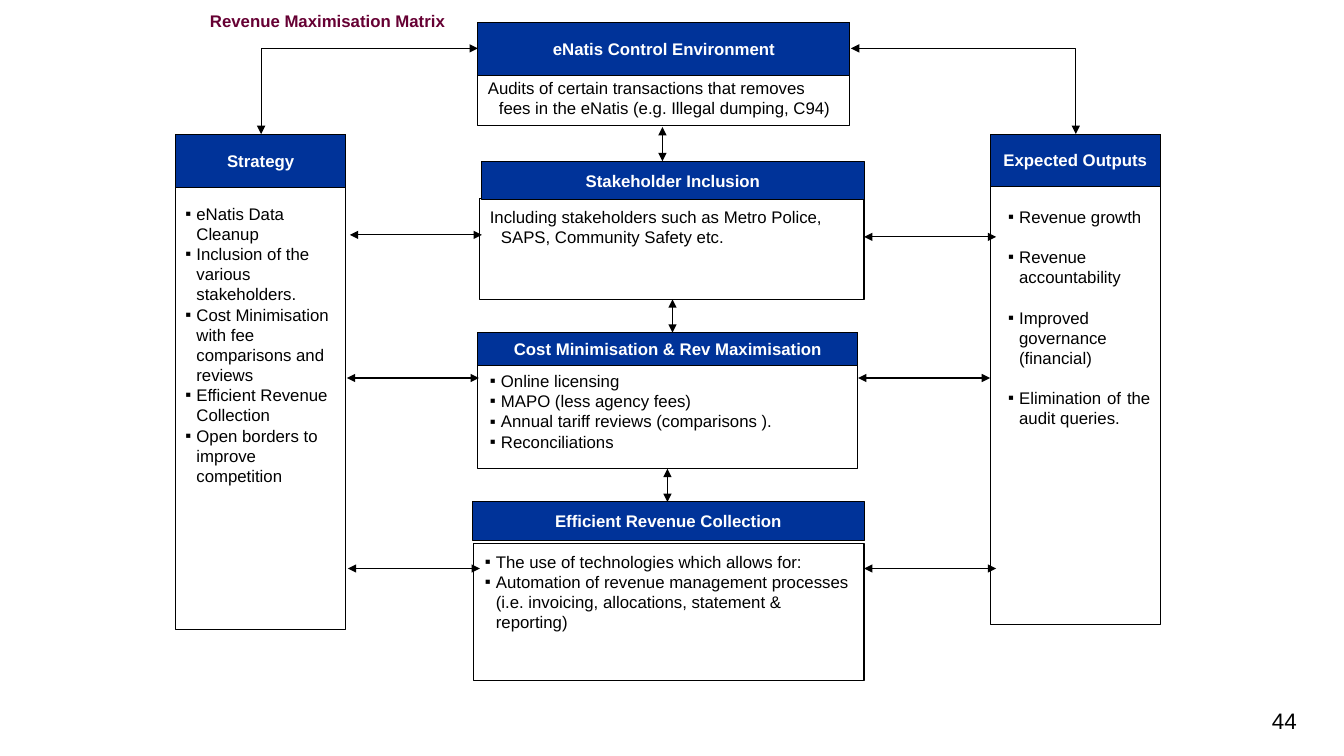
from lxml.etree import SubElement
from pptx import Presentation
from pptx.dml.color import RGBColor
from pptx.enum.shapes import MSO_CONNECTOR as Link, MSO_SHAPE as Shape
from pptx.enum.text import MSO_ANCHOR as Anchor, PP_ALIGN as Align
from pptx.oxml.ns import qn
from pptx.util import Emu, Pt

PX = 9144  # one px is a hundredth of an inch
COLOURS = {"black": "000000", "white": "FFFFFF", "navy": "003399", "plum": "660033"}
INDENT = 11


def emu(*lengths):
    return [Emu(length * PX) for length in lengths]


def colour(name):
    return RGBColor.from_string(COLOURS[name])


class Matrix:
    """Style and drawing methods for the current slide."""
    font = "Arial"
    line_width = Pt(0.75)
    line_height = Pt(14.4)

    def __init__(self, slide):
        self.shapes = slide.shapes

    def add_text(self, paragraph, text, ink="black", size=12, bold=False, align=Align.LEFT):
        paragraph.alignment = align
        run = paragraph.add_run()
        run.text = text
        run.font.name, run.font.size, run.font.bold = self.font, Pt(size), bold
        run.font.color.rgb = colour(ink)

    def box(self, place, fill, title=None):
        box = self.shapes.add_shape(Shape.RECTANGLE, *emu(*place))
        box.shadow.inherit = False
        box.fill.solid()
        box.fill.fore_color.rgb = colour(fill)
        box.line.color.rgb = colour("black")
        box.line.width = self.line_width
        if title:
            frame = box.text_frame
            frame.word_wrap = False
            frame.vertical_anchor = Anchor.MIDDLE
            self.add_text(frame.paragraphs[0], title, "white", bold=True, align=Align.CENTER)

    def label(self, place, text, wrap=True, anchor=Anchor.TOP, **style):
        frame = self.shapes.add_textbox(*emu(*place)).text_frame
        frame.word_wrap = wrap
        frame.vertical_anchor = anchor
        self.add_text(frame.paragraphs[0], text, **style)

    def points(self, place, items, bullet=True, gap=0, align=Align.LEFT):
        frame = self.shapes.add_textbox(*emu(*place)).text_frame
        frame.word_wrap = True
        for index, item in enumerate(items):
            paragraph = frame.add_paragraph() if index else frame.paragraphs[0]
            props = paragraph._p.get_or_add_pPr()
            props.set("marL", str(INDENT * PX))
            props.set("indent", str(-INDENT * PX))
            if bullet:
                SubElement(props, qn("a:buFont")).set("typeface", self.font)
                SubElement(props, qn("a:buChar")).set("char", "▪")
            paragraph.line_spacing = self.line_height
            if index and gap:
                paragraph.space_before = Pt(gap)
            self.add_text(paragraph, item, align=align)

    def panel(self, title, header, body, place, items, **style):
        self.box(body, "white")
        self.box(header, "navy", title)
        self.points(place, items, **style)

    def arrow(self, x1, y1, x2, y2):
        bent = x1 != x2 and y1 != y2
        kind = Link.ELBOW if bent else Link.STRAIGHT
        arrow = self.shapes.add_connector(kind, *emu(x1, y1, x2, y2))
        arrow.line.color.rgb = colour("black")
        arrow.line.width = self.line_width
        props = arrow._element.spPr
        if bent:  # a single corner
            props.find(qn("a:prstGeom")).set("prst", "bentConnector2")
        for end in ("a:headEnd", "a:tailEnd"):
            SubElement(props.find(qn("a:ln")), qn(end)).set("type", "triangle")
        SubElement(props, qn("a:effectLst"))


def main():
    deck = Presentation()
    deck.slide_width, deck.slide_height = emu(1333, 750)
    matrix = Matrix(deck.slides.add_slide(deck.slide_layouts[6]))

    # Side columns
    matrix.panel("Expected Outputs", (982, 133, 169, 52), (982, 133, 169, 487),
                 (990, 200, 161, 252),
                 ["Revenue growth", "Revenue accountability",
                  "Improved governance (financial)",
                  "Elimination of the audit queries."],
                 gap=14.4, align=Align.JUSTIFY)
    matrix.panel("Strategy", (174, 133, 169, 53), (174, 133, 169, 492),
                 (174, 197, 177, 293),
                 ["eNatis Data Cleanup", "Inclusion of the various stakeholders.",
                  "Cost Minimisation with fee comparisons and reviews",
                  "Efficient Revenue Collection", "Open borders to improve competition"])

    # Central stack, top to bottom
    matrix.panel("eNatis Control Environment", (474, 22, 369, 53), (474, 42, 369, 83),
                 (474, 72, 369, 50),
                 ["Audits of certain transactions that removes fees in the eNatis "
                  "(e.g. Illegal dumping, C94)"], bullet=False)
    matrix.panel("Stakeholder Inclusion", (478, 160, 379, 38), (476, 197, 381, 100),
                 (476, 200, 375, 50),
                 ["Including stakeholders such as Metro Police, SAPS, "
                  "Community Safety etc."], bullet=False)
    matrix.panel("Cost Minimisation & Rev Maximisation", (474, 330, 377, 33),
                 (474, 330, 377, 135), (476, 363, 375, 91),
                 ["Online licensing", "MAPO (less agency fees)",
                  "Annual tariff reviews (comparisons ).", "Reconciliations"])
    matrix.panel("Efficient Revenue Collection", (469, 498, 388, 38),
                 (470, 539, 387, 136), (471, 542, 388, 91),
                 ["The use of technologies which allows for:",
                  "Automation of revenue management processes "
                  "(i.e. invoicing, allocations, statement & reporting)"])

    # Corner arrows from the control environment to the columns
    matrix.arrow(474, 48, 259, 133)
    matrix.arrow(844, 48, 1067, 133)

    # Arrows between the columns and the stack
    for left, y in ((347, 233), (857, 235), (344, 375), (851, 375), (345, 564), (857, 564)):
        matrix.arrow(left, y, left + 131, y)

    # Arrows down the stack
    for x, top, bottom in ((657, 126, 160), (667, 297, 330), (662, 465, 498)):
        matrix.arrow(x, top, x, bottom)

    # Title and page number
    matrix.label((197, 6, 256, 30), "Revenue Maximisation Matrix", wrap=False,
                 ink="plum", bold=True, align=Align.CENTER)
    matrix.label((1242, 695, 54, 40), "44", anchor=Anchor.MIDDLE, size=16, align=Align.RIGHT)

    deck.save("out.pptx")


if __name__ == "__main__":
    main()
